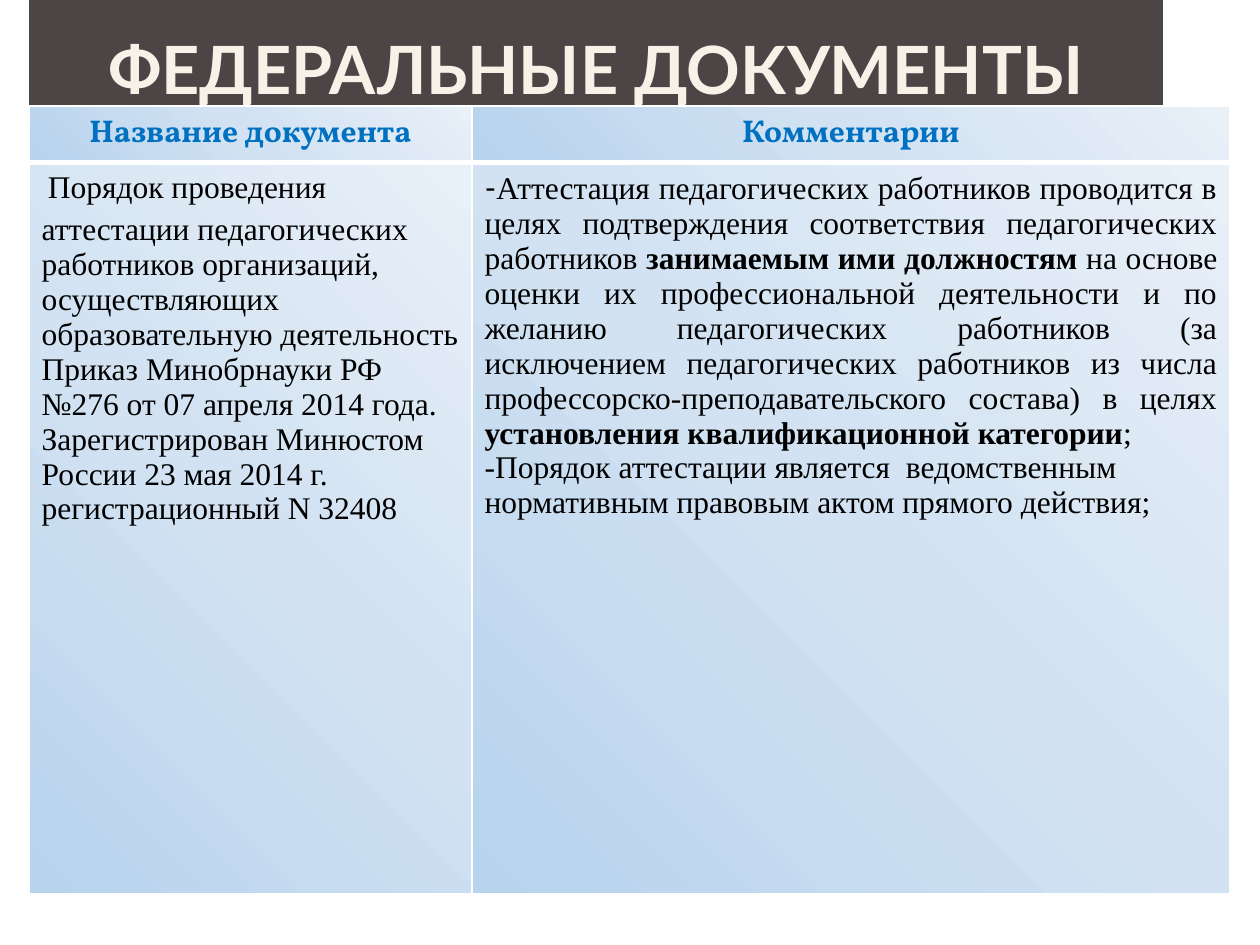
"""Build the slide on federal documents: a title bar and a two-column table."""
from lxml.etree import SubElement
from pptx import Presentation
from pptx.dml.color import RGBColor
from pptx.enum.text import MSO_ANCHOR, MSO_AUTO_SIZE, PP_ALIGN
from pptx.oxml.ns import qn
from pptx.util import Pt

PX = 914400 / 126
COLORS = {"bar": "4C4545", "title": "F7F1E7", "heading": "0070C0", "space": "81875A",
          "body": "000000", "border": "FFFFFF"}
GRADIENT = [(0, "B7D3ED"), (50, "D2E2F2"), (100, "E8F0F8")]
STYLES = {
    "title": dict(name="Lato", size=Pt(38), bold=True),
    "heading": dict(name="Vollkorn", size=Pt(18), bold=True),
    "space": dict(name="Vollkorn", size=Pt(18), bold=True),
    "dash": dict(name="Lato", size=Pt(18), bold=False),
    "body": dict(name="Times New Roman", size=Pt(18), bold=False),
    "strong": dict(name="Times New Roman", size=Pt(18), bold=True),
}

TITLE = [(PP_ALIGN.CENTER, [("title", "ФЕДЕРАЛЬНЫЕ ДОКУМЕНТЫ")])]
ROWS = [
    [[(PP_ALIGN.CENTER, [("heading", "Название документа")])],
     [(PP_ALIGN.CENTER, [("heading", "Комментарии")])]],
    [[(PP_ALIGN.LEFT, [
        ("space", " "),
        ("body", "Порядок проведения аттестации педагогических работников организаций, "
                 "осуществляющих образовательную деятельность Приказ Минобрнауки РФ №276 "
                 "от 07 апреля 2014 года. Зарегистрирован Минюстом России 23 мая 2014 г. "
                 "регистрационный N 32408")])],
     [(PP_ALIGN.JUSTIFY, [
         ("dash", "-"),
         ("body", "Аттестация педагогических работников проводится в целях подтверждения "
                  "соответствия педагогических работников "),
         ("strong", "занимаемым ими должностям "),
         ("body", "на основе оценки их профессиональной деятельности и по желанию "
                  "педагогических работников (за исключением педагогических работников из "
                  "числа профессорско-преподавательского состава) в целях "),
         ("strong", "установления квалификационной категории"),
         ("body", ";")]),
      (PP_ALIGN.LEFT, [
          ("body", "-Порядок аттестации является  ведомственным нормативным правовым актом "
                   "прямого действия;")])]],
]
TITLE_BOX = (29, 0, 1134, 108)
TABLE_LEFT, TABLE_TOP = 29, 106
COLUMN_WIDTHS = [443, 758]
ROW_HEIGHTS = [50, 731]


def px(value):
    return round(value * PX)


def write(frame, paragraphs):
    for index, (align, spans) in enumerate(paragraphs):
        para = frame.add_paragraph() if index else frame.paragraphs[0]
        para.alignment = align
        for style, text in spans:
            span = para.add_run()
            span.text = text
            for key, value in STYLES[style].items():
                setattr(span.font, key, value)
            span.font.color.rgb = RGBColor.from_string(COLORS.get(style, COLORS["body"]))


def add_color(parent, color):
    SubElement(parent, qn("a:srgbClr"), val=color)


def decorate(cell, bottom_width):
    props = cell._tc.get_or_add_tcPr()
    for side, width in (("L", 1), ("R", 1), ("T", 1), ("B", bottom_width)):
        line = SubElement(props, qn(f"a:ln{side}"), w=str(Pt(width)))
        add_color(SubElement(line, qn("a:solidFill")), COLORS["border"])
    fill = SubElement(props, qn("a:gradFill"), rotWithShape="1")
    stops = SubElement(fill, qn("a:gsLst"))
    for position, color in GRADIENT:
        add_color(SubElement(stops, qn("a:gs"), pos=str(position * 1000)), color)
    shade = SubElement(fill, qn("a:path"), path="circle")
    SubElement(shade, qn("a:fillToRect"), t="100000", r="100000")


def add_title(page):
    title = page.shapes.title
    title.left, title.top, title.width, title.height = map(px, TITLE_BOX)
    title.fill.solid()
    title.fill.fore_color.rgb = RGBColor.from_string(COLORS["bar"])
    frame = title.text_frame
    settings = dict(margin_left=px(6), margin_right=px(6), margin_top=0, margin_bottom=0,
                    word_wrap=True, auto_size=MSO_AUTO_SIZE.NONE,
                    vertical_anchor=MSO_ANCHOR.BOTTOM)
    for key, value in settings.items():
        setattr(frame, key, value)
    write(frame, TITLE)


def add_documents(page):
    box = page.shapes.add_table(len(ROWS), len(COLUMN_WIDTHS), px(TABLE_LEFT), px(TABLE_TOP),
                                px(sum(COLUMN_WIDTHS)), px(sum(ROW_HEIGHTS)))
    table = box.table
    table.horz_banding = False
    for column, width in zip(table.columns, COLUMN_WIDTHS):
        column.width = px(width)
    for row, height, contents in zip(table.rows, ROW_HEIGHTS, ROWS):
        row.height = px(height)
        for cell, paragraphs in zip(row.cells, contents):
            write(cell.text_frame, paragraphs)
            decorate(cell, 3 if contents is ROWS[0] else 1)


def main():
    deck = Presentation()
    deck.slide_width, deck.slide_height = px(1260), px(945)
    page = deck.slides.add_slide(deck.slide_layouts[5])
    add_title(page)
    add_documents(page)
    deck.save("out.pptx")


if __name__ == "__main__":
    main()
